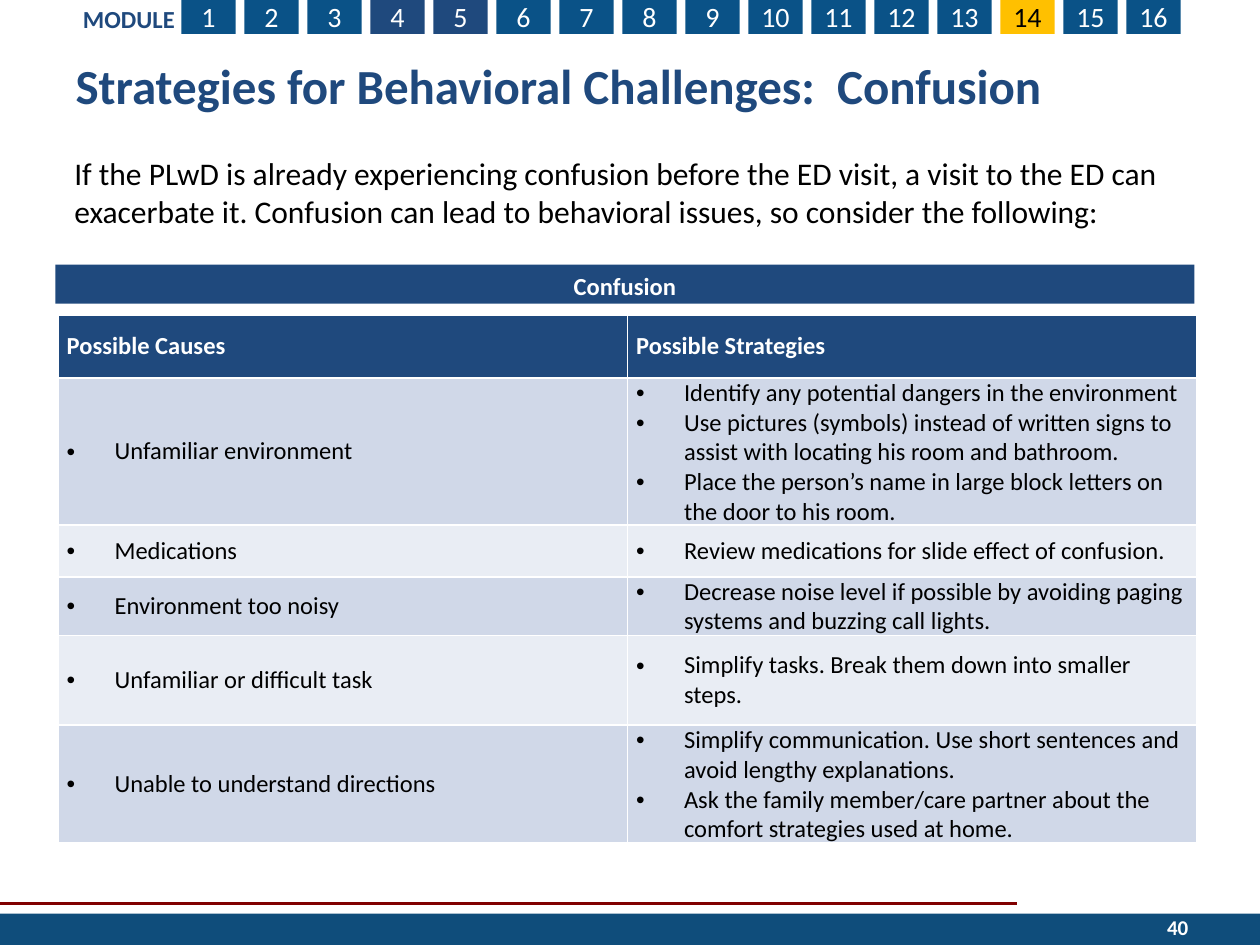
from lxml.etree import SubElement
from pptx import Presentation
from pptx.dml.color import RGBColor
from pptx.enum.shapes import MSO_CONNECTOR, MSO_SHAPE
from pptx.enum.text import MSO_ANCHOR, MSO_AUTO_SIZE, PP_ALIGN
from pptx.oxml.ns import qn
from pptx.util import Inches, Pt

COLORS = {
    "navy": "1F497D", "blue": "0A5287", "footer": "0F4D7B", "gold": "FFC000",
    "maroon": "800000", "white": "FFFFFF", "black": "000000",
    "band": "D0D8E8", "pale": "E9EDF4",
}


def fill(item, color):
    item.fill.solid()
    item.fill.fore_color.rgb = RGBColor.from_string(COLORS[color])


def write(frame, lines, size, color, bold=False, align=PP_ALIGN.LEFT, bullet=None, indent=0):
    for index, line in enumerate(lines):
        para = frame.paragraphs[0] if index == 0 else frame.add_paragraph()
        para.text = line
        para.alignment = align
        para.space_before = Pt(0)
        props = para._p.get_or_add_pPr()
        props.set("marL", str(Inches(indent)))
        props.set("indent", str(-Inches(indent)))
        if bullet:
            SubElement(props, qn("a:buFont"), typeface="Arial")
            SubElement(props, qn("a:buChar"), char=bullet)
        else:
            SubElement(props, qn("a:buNone"))
        para.font.name = "Calibri"
        para.font.size = Pt(size)
        para.font.bold = bold
        para.font.color.rgb = RGBColor.from_string(COLORS[color])


deck = Presentation()
deck.slide_width = Inches(10)
deck.slide_height = Inches(7.5)
page = deck.slides.add_slide(deck.slide_layouts.get_by_name("Two Content"))
shapes = page.shapes

rule = shapes.add_connector(
    MSO_CONNECTOR.STRAIGHT, Inches(-0.01), Inches(7.17), Inches(8.07), Inches(7.17))
rule.line.color.rgb = RGBColor.from_string(COLORS["maroon"])
rule.line.width = Pt(1.5)
SubElement(rule._element.spPr, qn("a:effectLst"))

footer = shapes.add_shape(MSO_SHAPE.RECTANGLE, 0, Inches(7.25), Inches(10), Inches(0.25))
footer.shadow.inherit = False
fill(footer, "footer")
footer.line.fill.background()

tab_colors = {4: "navy", 5: "navy", 14: "gold"}
for number in range(1, 17):
    tab = shapes.add_shape(
        MSO_SHAPE.RECTANGLE, Inches(0.94 + 0.5 * number), Inches(-0.01), Inches(0.43), Inches(0.28))
    tab.shadow.inherit = False
    fill(tab, tab_colors.get(number, "blue"))
    tab.line.fill.background()
    frame = tab.text_frame
    frame.margin_left = frame.margin_right = 0
    frame.vertical_anchor = MSO_ANCHOR.MIDDLE
    write(frame, [str(number)], 16, "black" if number == 14 else "white", align=PP_ALIGN.CENTER)

module_label = shapes.add_textbox(Inches(0.56), Inches(-0.02), Inches(1.01), Inches(0.34))
module_label.text_frame.word_wrap = True
write(module_label.text_frame, ["MODULE"], 14, "navy", bold=True)

page_number = shapes.add_textbox(Inches(7.2), Inches(7.16), Inches(2.33), Inches(0.4))
page_number.text_frame.word_wrap = True
page_number.text_frame.vertical_anchor = MSO_ANCHOR.MIDDLE
write(page_number.text_frame, ["40"], 12, "white", bold=True, align=PP_ALIGN.RIGHT)

title, intro, banner = page.placeholders
for box, left, top, width, height in (
    (title, 0.5, 0.25, 9, 0.84),
    (intro, 0.49, 1.17, 9.04, 0.71),
    (banner, 0.44, 2.1, 9.04, 0.31),
):
    box.left, box.top = Inches(left), Inches(top)
    box.width, box.height = Inches(width), Inches(height)
    box.text_frame.auto_size = MSO_AUTO_SIZE.NONE

title.text_frame.vertical_anchor = MSO_ANCHOR.MIDDLE
write(title.text_frame, ["Strategies for Behavioral Challenges:  Confusion"], 28, "navy", bold=True)
write(intro.text_frame, [
    "If the PLwD is already experiencing confusion before the ED visit, a visit to the ED can "
    "exacerbate it. Confusion can lead to behavioral issues, so consider the following:"
], 18, "black")
fill(banner, "navy")
write(banner.text_frame, ["Confusion"], 14, "white", bold=True, align=PP_ALIGN.CENTER)

rows = [
    (0.5, "navy", ["Possible Causes"], ["Possible Strategies"]),
    (1.01, "band", ["Unfamiliar environment"], [
        "Identify any potential dangers in the environment",
        "Use pictures (symbols) instead of written signs to assist with locating his room and bathroom.",
        "Place the person’s name in large block letters on the door to his room.",
    ]),
    (0.41, "pale", ["Medications"], ["Review medications for slide effect of confusion."]),
    (0.41, "band", ["Environment too noisy"], [
        "Decrease noise level if possible by avoiding paging systems and buzzing call lights.",
    ]),
    (0.71, "pale", ["Unfamiliar or difficult task"], [
        "Simplify tasks. Break them down into smaller steps.",
    ]),
    (0.41, "band", ["Unable to understand directions"], [
        "Simplify communication. Use short sentences and avoid lengthy explanations.",
        "Ask the family member/care partner about the comfort strategies used at home.",
    ]),
]
table = shapes.add_table(
    len(rows), 2, Inches(0.46), Inches(2.5), Inches(9.04), Inches(sum(row[0] for row in rows))).table
for row_index, (height, color, *entries) in enumerate(rows):
    table.rows[row_index].height = Inches(height)
    for column_index, lines in enumerate(entries):
        cell = table.cell(row_index, column_index)
        fill(cell, color)
        cell.vertical_anchor = MSO_ANCHOR.MIDDLE
        cell.margin_left = cell.margin_right = Inches(0.07)
        cell.margin_top = cell.margin_bottom = 0
        if row_index == 0:
            write(cell.text_frame, lines, 14, "white", bold=True)
        else:
            write(cell.text_frame, lines, 14, "black", bullet="•", indent=0.38)

deck.save("out.pptx")
